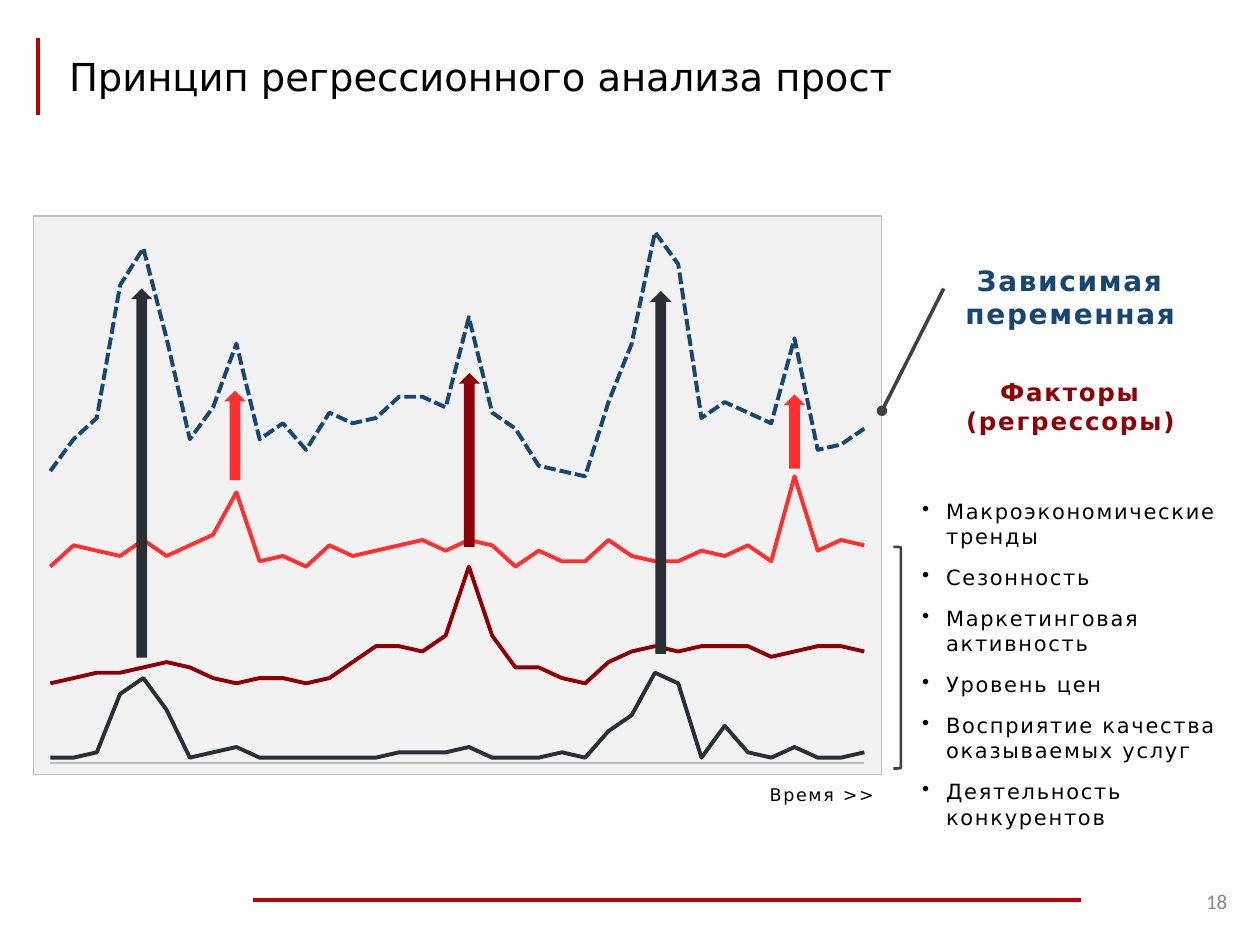
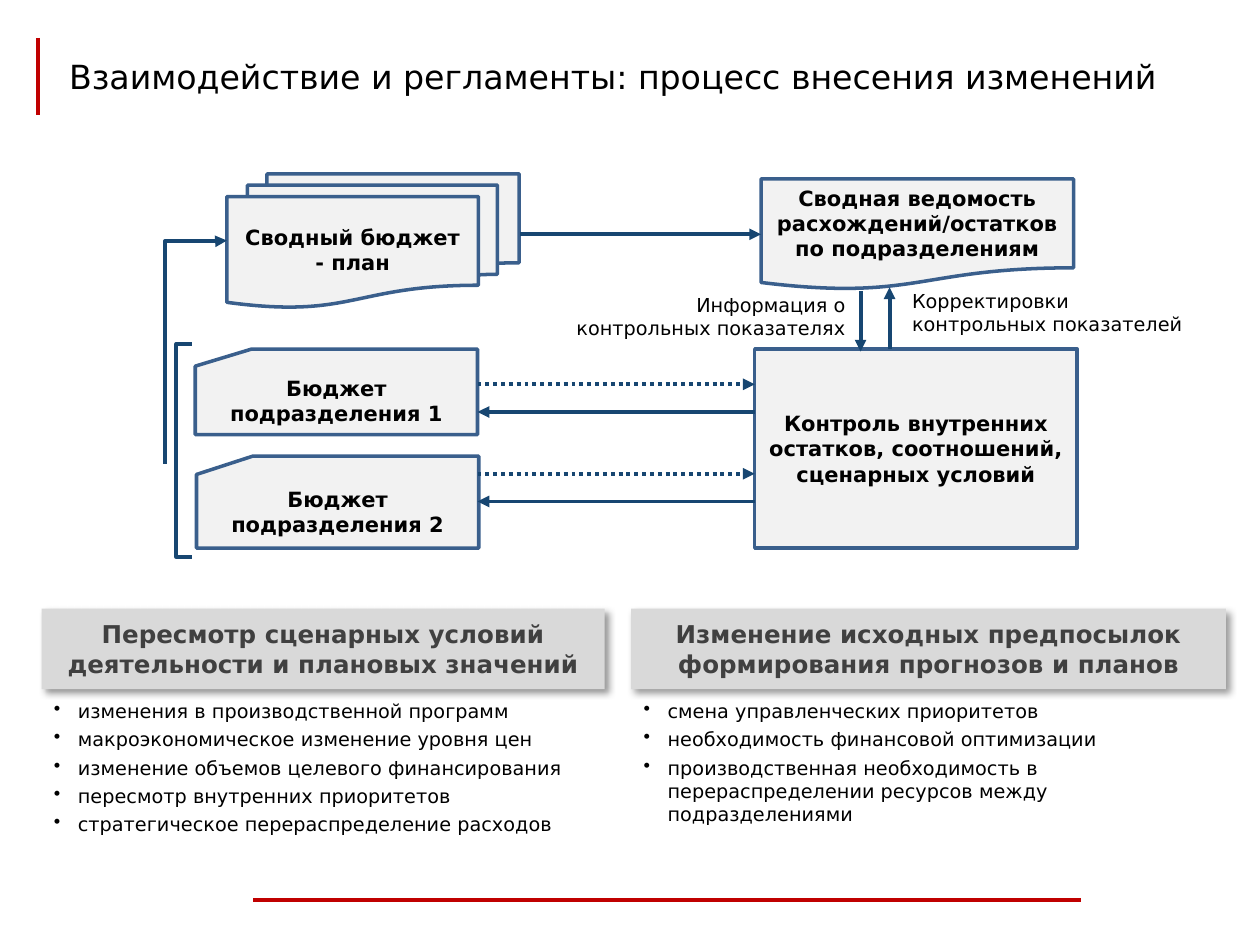
from lxml import etree
from pptx import Presentation
from pptx.chart.data import XyChartData
from pptx.dml.color import RGBColor
from pptx.enum.chart import XL_CHART_TYPE, XL_TICK_LABEL_POSITION, XL_TICK_MARK
from pptx.enum.dml import MSO_LINE
from pptx.enum.shapes import MSO_CONNECTOR, MSO_SHAPE
from pptx.enum.text import MSO_ANCHOR, PP_ALIGN
from pptx.oxml import parse_xml
from pptx.oxml.ns import nsdecls, qn
from pptx.util import Inches, Pt

COLORS = {
    "accent": "C00000", "text": "000000", "number": "898989", "panel": "F2F2F2",
    "border": "BFBFBF", "navy": "174671", "coal": "2C2E35", "wine": "8F0006",
    "red": "FF2F2F", "gray": "404040", "header": "D9D9D9", "outline": "3A5F8C",
}
FONT = "DejaVu Sans"
BULLET = 0.19


def rgb(name):
    return RGBColor.from_string(COLORS[name])


def set_attrs(obj, values):
    for name, value in values.items():
        setattr(obj, name, value)


def inches(*values):
    return [Inches(v) for v in values]


def add_paragraph(tf, text, size, color="text", bold=False, align=PP_ALIGN.LEFT,
                  font=FONT, after=0, spacing=0, bullet=False):
    p = tf.paragraphs[0] if not tf.paragraphs[0].runs else tf.add_paragraph()
    set_attrs(p, {"alignment": align, "space_after": Pt(after)})
    if bullet:
        pPr = p._p.get_or_add_pPr()
        pPr.set("marL", str(Inches(BULLET)))
        pPr.set("indent", str(-Inches(BULLET)))
        etree.SubElement(pPr, qn("a:buChar")).set("char", "•")
    r = p.add_run()
    r.text = text
    set_attrs(r.font, {"name": font, "size": Pt(size), "bold": bold})
    r.font.color.rgb = rgb(color)
    if spacing:
        r._r.get_or_add_rPr().set("spc", str(spacing * 100))


def add_text(s, box, anchor=MSO_ANCHOR.TOP):
    tf = s.shapes.add_textbox(*inches(*box)).text_frame
    set_attrs(tf, {"word_wrap": True, "vertical_anchor": anchor})
    return tf


def add_shape(s, kind, box, fill=None, line=None, width=2):
    sp = s.shapes.add_shape(kind, *inches(*box))
    sp.shadow.inherit = False
    if fill:
        sp.fill.solid()
        sp.fill.fore_color.rgb = rgb(fill)
    else:
        sp.fill.background()
    if line:
        sp.line.color.rgb = rgb(line)
        sp.line.width = Pt(width)
    else:
        sp.line.fill.background()
    return sp


def add_label_shape(s, kind, box, text, size=12, color="text", **style):
    sp = add_shape(s, kind, box, **style)
    tf = sp.text_frame
    set_attrs(tf, {"word_wrap": True, "vertical_anchor": MSO_ANCHOR.MIDDLE})
    add_paragraph(tf, text, size, color, True, PP_ALIGN.CENTER)
    return sp


def add_line(s, start, end, color="navy", width=2.25, head=None, tail=None,
             dash=None, kind=MSO_CONNECTOR.STRAIGHT):
    c = s.shapes.add_connector(kind, *inches(*start, *end))
    c.line.color.rgb = rgb(color)
    c.line.width = Pt(width)
    if dash:
        c.line.dash_style = dash
    ln = c.line._get_or_add_ln()
    for tag, arrow in (("a:headEnd", head), ("a:tailEnd", tail)):
        if arrow:
            etree.SubElement(ln, qn(tag)).set("type", arrow)
    etree.SubElement(c._element.spPr, qn("a:effectLst"))
    return c


def add_frame(prs, title, size, number=None):
    s = prs.slides.add_slide(prs.slide_layouts[6])
    add_line(s, (2.01, 7.14), (8.58, 7.14), "accent")
    add_line(s, (0.3, 0.3), (0.3, 0.91), "accent")
    add_paragraph(add_text(s, (0.45, 0.3, 9.05, 0.61), MSO_ANCHOR.MIDDLE), title, size)
    if number:
        tf = add_text(s, (9.38, 6.95, 0.46, 0.4), MSO_ANCHOR.MIDDLE)
        add_paragraph(tf, number, 12, "number", align=PP_ALIGN.RIGHT, font="Calibri")
    return s


SERIES = [
    ("navy", [55, 61, 65, 90, 97, 80, 61, 67, 79, 61, 64, 59, 66, 64, 65, 69, 69, 67,
              84, 66, 63, 56, 55, 54, 68, 79, 100, 94, 65, 68, 66, 64, 80, 59, 60, 63]),
    ("coal", [1, 1, 2, 13, 16, 10, 1, 2, 3, 1, 1, 1, 1, 1, 1, 2, 2, 2,
              3, 1, 1, 1, 2, 1, 6, 9, 17, 15, 1, 7, 2, 1, 3, 1, 1, 2]),
    ("wine", [15, 16, 17, 17, 18, 19, 18, 16, 15, 16, 16, 15, 16, 19, 22, 22, 21, 24,
              37, 24, 18, 18, 16, 15, 19, 21, 22, 21, 22, 22, 22, 20, 21, 22, 22, 21]),
    ("red", [37, 41, 40, 39, 42, 39, 41, 43, 51, 38, 39, 37, 41, 39, 40, 41, 42, 40,
             42, 41, 37, 40, 38, 38, 42, 39, 38, 38, 40, 39, 41, 38, 54, 40, 42, 41]),
]


def style_chart_area(chart):
    chart._chartSpace.find(qn("c:chart")).addnext(parse_xml(
        f'<c:spPr {nsdecls("c", "a")}>'
        f'<a:solidFill><a:srgbClr val="{COLORS["panel"]}"/></a:solidFill>'
        f'<a:ln w="{Pt(0.75)}"><a:solidFill><a:srgbClr val="{COLORS["border"]}"/>'
        '</a:solidFill></a:ln></c:spPr>'))
    area = chart._chartSpace.find(".//" + qn("c:plotArea"))
    for old in area.findall(qn("c:layout")):
        area.remove(old)
    sizes = {"x": 0.02, "y": 0.01, "w": 0.96, "h": 0.97}
    places = "".join(f'<c:{k} val="{v}"/>' for k, v in sizes.items())
    area.insert(0, parse_xml(
        f'<c:layout {nsdecls("c")}><c:manualLayout><c:layoutTarget val="inner"/>'
        f'<c:xMode val="edge"/><c:yMode val="edge"/>{places}'
        '</c:manualLayout></c:layout>'))


def add_regression_chart(s, box):
    data = XyChartData()
    for i, (_, values) in enumerate(SERIES, 1):
        series = data.add_series(f"Series {i}")
        for moment, value in enumerate(values, 1):
            series.add_data_point(moment, value)
    chart = s.shapes.add_chart(XL_CHART_TYPE.XY_SCATTER_SMOOTH_NO_MARKERS,
                               *inches(*box), data).chart
    set_attrs(chart, {"has_legend": False, "has_title": False})
    set_attrs(chart.font, {"name": "Calibri", "size": Pt(10)})
    chart.font.color.rgb = rgb("text")
    for axis, low, high in ((chart.category_axis, 1, 36), (chart.value_axis, 0, 102)):
        set_attrs(axis, {
            "minimum_scale": low, "maximum_scale": high,
            "has_major_gridlines": False, "has_minor_gridlines": False,
            "major_tick_mark": XL_TICK_MARK.NONE, "minor_tick_mark": XL_TICK_MARK.NONE,
            "tick_label_position": XL_TICK_LABEL_POSITION.NONE})
    chart.category_axis.format.line.color.rgb = rgb("border")
    chart.category_axis.format.line.width = Pt(0.75)
    chart.value_axis.format.line.fill.background()
    plot = chart.plots[0]
    plot.vary_by_categories = False
    for series, (color, _) in zip(plot.series, SERIES):
        series.smooth = True
        series.format.line.color.rgb = rgb(color)
        series.format.line.width = Pt(2.25)
    plot.series[0].format.line.dash_style = MSO_LINE.SQUARE_DOT
    style_chart_area(chart)

    x, y, w, h = box
    for dx, dy, height, color in (
            (0.78, 0.58, 2.93, "coal"), (1.52, 1.39, 0.71, "red"),
            (3.38, 1.25, 1.38, "wine"), (4.9, 0.6, 2.88, "coal"),
            (5.96, 1.42, 0.59, "red")):
        add_shape(s, MSO_SHAPE.UP_ARROW, (x + dx, y + dy, 0.17, height), color)
    tf = add_text(s, (x + w - 0.99, y + h + 0.02, 1.14, 0.27))
    add_paragraph(tf, "Время >>", 10, spacing=1)


def add_variables(s, box):
    x, y, w, h = box
    add_line(s, (x + 0.49, y + 0.25), (x, y + 1.22), "gray", 2, tail="oval")
    add_shape(s, MSO_SHAPE.RIGHT_BRACKET, (x + 0.09, y + 2.3, 0.06, 1.76),
              line="gray", width=1.5)
    heading = {"bold": True, "align": PP_ALIGN.CENTER, "spacing": 1}
    tf = add_text(s, (x + 0.49, y, 2.01, 0.43))
    add_paragraph(tf, "Зависимая переменная", 16, "navy", **heading)
    tf = add_text(s, (x + 0.22, y + 0.9, w - 0.22, h - 0.9))
    add_paragraph(tf, "Факторы (регрессоры)", 14, "wine", after=36, **heading)
    for factor in ("Макроэкономические тренды", "Сезонность",
                   "Маркетинговая активность", "Уровень цен",
                   "Восприятие качества оказываемых услуг",
                   "Деятельность конкурентов"):
        add_paragraph(tf, factor, 12, after=9, spacing=1, bullet=True)


def add_process(s, box):
    x, y, w, h = box
    block = {"fill": "panel", "line": "outline"}
    for kind, place, text in (
            (MSO_SHAPE.FLOWCHART_MULTIDOCUMENT, (0.49, 0, 2.32, 1.06),
             "Сводный бюджет - план"),
            (MSO_SHAPE.FLOWCHART_DOCUMENT, (4.73, 0.04, 2.48, 0.88),
             "Сводная ведомость расхождений/остатков по подразделениям"),
            (MSO_SHAPE.FLOWCHART_CARD, (0.24, 1.39, 2.24, 0.68),
             "Бюджет подразделения 1"),
            (MSO_SHAPE.FLOWCHART_CARD, (0.25, 2.24, 2.24, 0.73),
             "Бюджет подразделения 2"),
            (MSO_SHAPE.RECTANGLE, (4.68, 1.39, 2.56, 1.58),
             "Контроль внутренних остатков, соотношений, сценарных условий")):
        dx, dy, *size = place
        add_label_shape(s, kind, (x + dx, y + dy, *size), text, **block)

    for dx, dy, width, text, align in (
            (3.06, 0.83, 2.44, "Информация о контрольных показателях", PP_ALIGN.RIGHT),
            (5.83, 0.8, 2.36, "Корректировки контрольных показателей", PP_ALIGN.LEFT)):
        tf = add_text(s, (x + dx, y + dy, width, 0.6), MSO_ANCHOR.MIDDLE)
        add_paragraph(tf, text, 11, align=align)

    bracket = add_shape(s, MSO_SHAPE.LEFT_BRACKET, (x + 0.09, y + 1.35, 0.12, 1.69),
                        line="navy", width=2.25)
    bracket.adjustments[0] = 0

    elbow = add_line(s, (x + 1.13, y + 1.66), (x - 0.64, y + 1.17),
                     tail="triangle", kind=MSO_CONNECTOR.ELBOW)
    spPr = elbow._element.spPr
    spPr.find(qn("a:xfrm")).set("rot", "5400000")
    geom = spPr.find(qn("a:prstGeom"))
    for old in list(geom):
        geom.remove(old)
    guide = etree.SubElement(etree.SubElement(geom, qn("a:avLst")), qn("a:gd"))
    guide.set("name", "adj1")
    guide.set("fmla", "val 99700")

    add_line(s, (x + 2.82, y + 0.48), (x + 4.73, y + 0.48), tail="triangle")
    for dy in (1.67, 2.38):
        left, right = x + 2.48, x + 4.68
        add_line(s, (left, y + dy), (right, y + dy), tail="triangle",
                 dash=MSO_LINE.ROUND_DOT)
        add_line(s, (right, y + dy + 0.22), (left, y + dy + 0.22), tail="triangle")
    add_line(s, (x + 5.52, y + 0.93), (x + 5.52, y + 1.41), tail="triangle")
    add_line(s, (x + 5.75, y + 1.39), (x + 5.75, y + 0.9), tail="triangle")


def add_reasons(s, box, title, reasons):
    x, y, w, h = box
    sp = add_label_shape(s, MSO_SHAPE.RECTANGLE, (x, y, w, 0.64), title, 14, "gray",
                         fill="header")
    effects = sp._element.spPr.find(qn("a:effectLst"))
    effects.append(parse_xml(
        f'<a:outerShdw {nsdecls("a")} blurRad="{Pt(4)}" dist="{Pt(3)}" dir="2700000" '
        f'algn="tl" rotWithShape="0"><a:srgbClr val="{COLORS["text"]}">'
        '<a:alpha val="40000"/></a:srgbClr></a:outerShdw>'))
    tf = add_text(s, (x, y + 0.67, w, h - 0.67))
    for reason in reasons:
        add_paragraph(tf, reason, 11, after=3, bullet=True)


def main():
    prs = Presentation()
    set_attrs(prs, {"slide_width": Inches(10), "slide_height": Inches(7.5)})

    s = add_frame(prs, "Принцип регрессионного анализа прост", 22, "18")
    add_regression_chart(s, (0.26, 1.71, 6.74, 4.44))
    add_variables(s, (7, 2.04, 2.77, 4.53))

    s = add_frame(prs, "Взаимодействие и регламенты: процесс внесения изменений", 19)
    add_reasons(s, (0.33, 4.83, 4.47, 1.86),
                "Пересмотр сценарных условий деятельности и плановых значений",
                ("изменения в производственной программ",
                 "макроэкономическое изменение уровня цен",
                 "изменение объемов целевого финансирования",
                 "пересмотр внутренних приоритетов",
                 "стратегическое перераспределение расходов"))
    add_reasons(s, (5.01, 4.83, 4.72, 2.16),
                "Изменение исходных предпосылок формирования прогнозов и планов",
                ("смена управленческих приоритетов",
                 "необходимость финансовой оптимизации",
                 "производственная необходимость в перераспределении ресурсов "
                 "между подразделениями"))
    add_process(s, (1.31, 1.38, 8.19, 3.04))
    prs.save("out.pptx")


if __name__ == "__main__":
    main()
